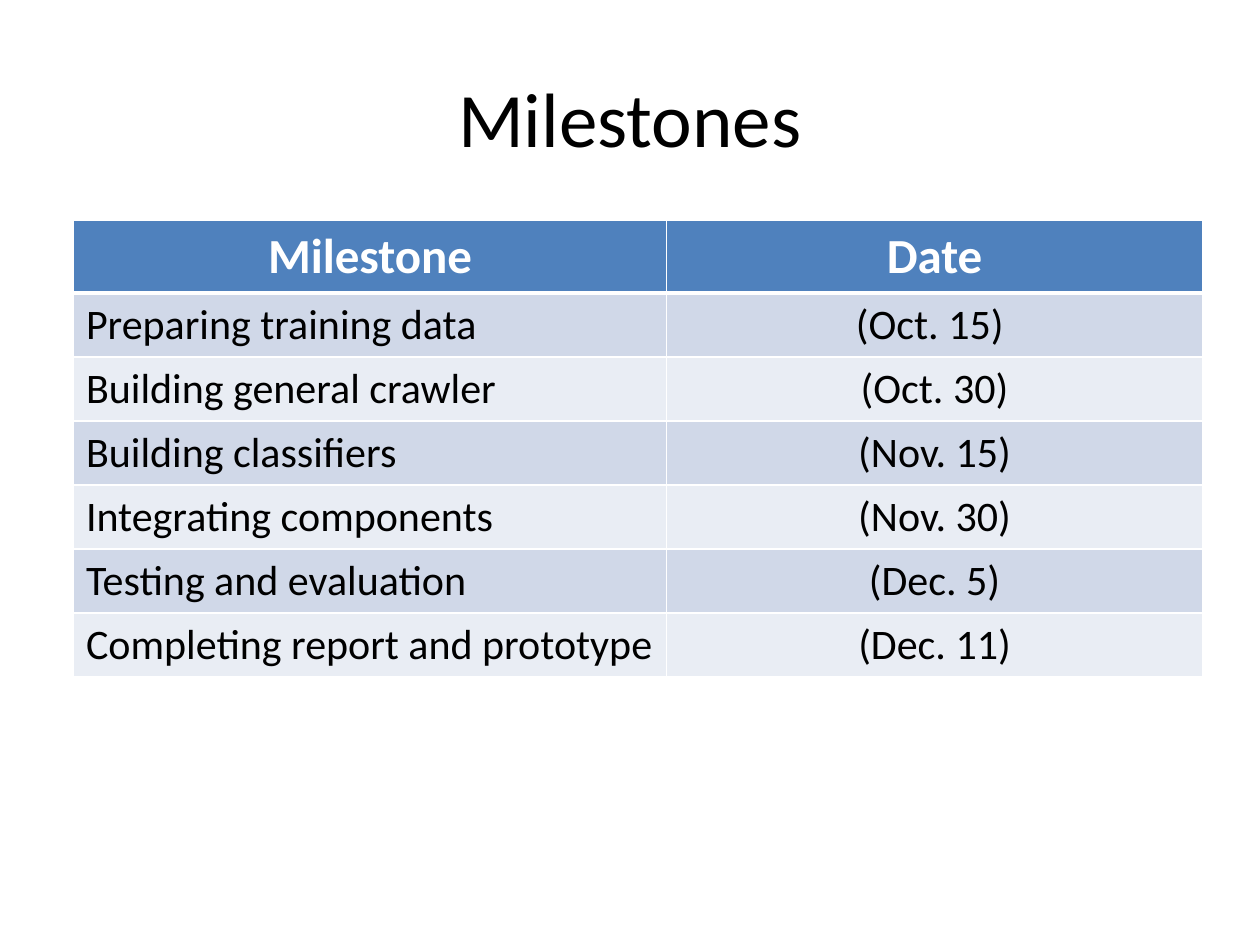
from dataclasses import dataclass

from lxml import etree
from pptx import Presentation
from pptx.dml.color import RGBColor
from pptx.enum.text import MSO_ANCHOR, PP_ALIGN
from pptx.oxml.ns import qn
from pptx.util import Cm, Pt

LEFT, CENTER = PP_ALIGN.LEFT, PP_ALIGN.CENTER
MIDDLE = MSO_ANCHOR.MIDDLE

BLACK = RGBColor(0x00, 0x00, 0x00)
WHITE = RGBColor(0xFF, 0xFF, 0xFF)
HEADER_BLUE = RGBColor(0x4F, 0x81, 0xBD)
BAND_DARK = RGBColor(0xD0, 0xD8, 0xE8)
BAND_LIGHT = RGBColor(0xE9, 0xED, 0xF4)

FONT = "Calibri"
COLUMN_WIDTHS = (Cm(11.96), Cm(10.8))
HEADER_HEIGHT, ROW_HEIGHT = Cm(1.46), Cm(1.29)


@dataclass(frozen=True)
class Milestone:
    name: str
    date: str


@dataclass(frozen=True)
class RowStyle:
    size: int
    color: RGBColor
    fill: RGBColor
    bold: bool
    alignments: tuple
    bottom_border: int = 1


HEADER = Milestone("Milestone", "Date")
MILESTONES = [
    Milestone("Preparing training data", "(Oct. 15) "),
    Milestone("Building general crawler", "(Oct. 30)"),
    Milestone("Building classifiers", "(Nov. 15)"),
    Milestone("Integrating components", "(Nov. 30)"),
    Milestone("Testing and evaluation", "(Dec. 5)"),
    Milestone("Completing report and prototype", "(Dec. 11)"),
]

HEADER_STYLE = RowStyle(28, WHITE, HEADER_BLUE, True, (CENTER, CENTER), 3)
BAND_STYLES = [
    RowStyle(24, BLACK, fill, False, (LEFT, CENTER))
    for fill in (BAND_DARK, BAND_LIGHT)
]


def write_text(frame, text: str, size: int, color: RGBColor, bold: bool, alignment) -> None:
    para = frame.paragraphs[0]
    para.text = text
    para.alignment = alignment
    para.font.name = FONT
    para.font.size = Pt(size)
    para.font.bold = bold
    para.font.color.rgb = color


def set_borders(cell, widths: dict[str, int]) -> None:
    """Draw white cell borders; they must stand before the fill."""
    properties = cell._tc.get_or_add_tcPr()
    for position, (side, width) in enumerate(widths.items()):
        line = etree.Element(qn(f"a:{side}"), w=str(Pt(width)))
        fill = etree.SubElement(line, qn("a:solidFill"))
        etree.SubElement(fill, qn("a:srgbClr"), val=str(WHITE))
        properties.insert(position, line)


def fill_row(row, milestone: Milestone, style: RowStyle, top_border: int) -> None:
    borders = {"lnL": 1, "lnR": 1, "lnT": top_border, "lnB": style.bottom_border}
    texts = (milestone.name, milestone.date)
    for cell, text, alignment in zip(row.cells, texts, style.alignments):
        write_text(cell.text_frame, text, style.size, style.color, style.bold, alignment)
        cell.fill.solid()
        cell.fill.fore_color.rgb = style.fill
        set_borders(cell, borders)


def add_title(page, text: str) -> None:
    box = page.shapes.add_textbox(Cm(1.27), Cm(0.76), Cm(22.86), Cm(3.18))
    box.text_frame.word_wrap = True
    box.text_frame.vertical_anchor = MIDDLE
    write_text(box.text_frame, text, 44, BLACK, False, CENTER)


def add_milestone_table(page) -> None:
    height = HEADER_HEIGHT + ROW_HEIGHT * len(MILESTONES)
    table = page.shapes.add_table(
        len(MILESTONES) + 1, len(COLUMN_WIDTHS),
        Cm(1.48), Cm(4.45), sum(COLUMN_WIDTHS), height,
    ).table
    for column, width in zip(table.columns, COLUMN_WIDTHS):
        column.width = width

    # Header row, then alternating bands
    styles = [HEADER_STYLE] + [BAND_STYLES[i % 2] for i in range(len(MILESTONES))]
    top_border = 1
    for row, milestone, style in zip(table.rows, [HEADER, *MILESTONES], styles):
        row.height = HEADER_HEIGHT if style is HEADER_STYLE else ROW_HEIGHT
        fill_row(row, milestone, style, top_border)
        top_border = style.bottom_border


def main() -> None:
    deck = Presentation()
    deck.slide_width, deck.slide_height = Cm(25.4), Cm(19.05)
    page = deck.slides.add_slide(deck.slide_layouts[6])
    add_title(page, "Milestones")
    add_milestone_table(page)
    deck.save("out.pptx")


if __name__ == "__main__":
    main()
